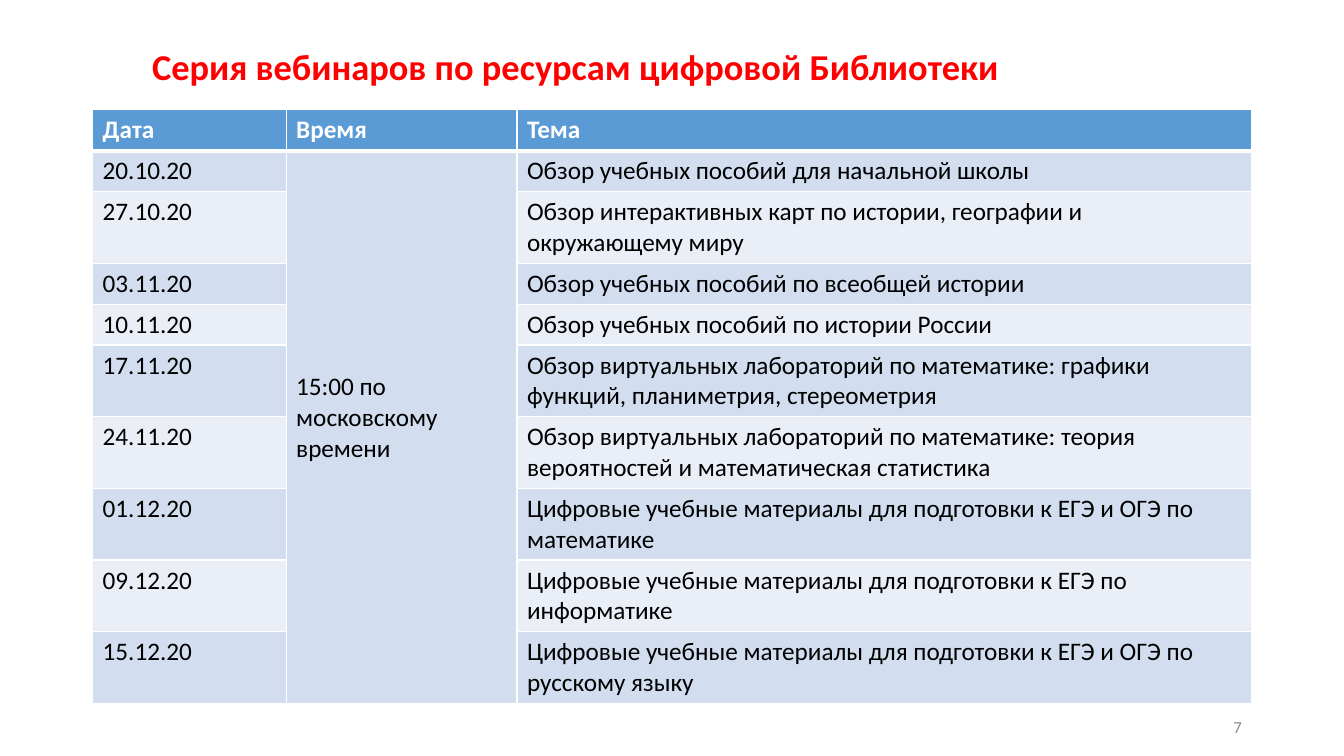
from lxml import etree
from pptx import Presentation
from pptx.dml.color import RGBColor
from pptx.enum.text import MSO_ANCHOR, PP_ALIGN
from pptx.oxml.ns import qn
from pptx.util import Pt

MIDDLE = MSO_ANCHOR.MIDDLE
LEFT, RIGHT = PP_ALIGN.LEFT, PP_ALIGN.RIGHT
FONT = "Calibri"
COLORS = {
    "title": "FF0000",
    "header": "5B9BD5",
    "odd": "D2DEEF",
    "even": "EAEFF7",
    "white": "FFFFFF",
    "text": "000000",
    "number": "8C8C8C",
}
HEADINGS = ["Дата", "Время", "Тема"]
TIME = "15:00 по московскому времени"
WEBINARS = [
    ("20.10.20", "Обзор учебных пособий для начальной школы"),
    ("27.10.20", "Обзор интерактивных карт по истории, географии и окружающему миру"),
    ("03.11.20", "Обзор учебных пособий по всеобщей истории"),
    ("10.11.20", "Обзор учебных пособий по истории России"),
    ("17.11.20", "Обзор виртуальных лабораторий по математике: графики функций, "
                 "планиметрия, стереометрия"),
    ("24.11.20", "Обзор виртуальных лабораторий по математике: теория вероятностей "
                 "и математическая статистика"),
    ("01.12.20", "Цифровые учебные материалы для подготовки к ЕГЭ и ОГЭ по математике"),
    ("09.12.20", "Цифровые учебные материалы для подготовки к ЕГЭ по информатике"),
    ("15.12.20", "Цифровые учебные материалы для подготовки к ЕГЭ и ОГЭ по русскому языку"),
]
COLUMN_WIDTHS = [138.2, 164.9, 524.9]
ONE_LINE, TWO_LINES = 29.2, 51.2
LINE_CAPACITY = 55  # characters that fit on one line of the topic column


def add_run(paragraph, text, size, color, bold=False):
    run = paragraph.add_run()
    run.text = text
    run.font.name = FONT
    run.font.size = Pt(size)
    run.font.bold = bold
    run.font.color.rgb = RGBColor.from_string(COLORS[color])


def add_label(slide, box, text, size, color, bold=False, align=LEFT, spacing=1.0):
    frame = slide.shapes.add_textbox(*(Pt(length) for length in box)).text_frame
    frame.word_wrap = True
    frame.vertical_anchor = MIDDLE
    paragraph = frame.paragraphs[0]
    paragraph.alignment = align
    paragraph.line_spacing = spacing
    add_run(paragraph, text, size, color, bold)


def set_borders(cell, bottom_width):
    properties = cell._tc.get_or_add_tcPr()
    widths = {"a:lnL": 1, "a:lnR": 1, "a:lnT": 1, "a:lnB": bottom_width}
    for position, (side, width) in enumerate(widths.items()):
        line = etree.Element(qn(side), w=str(Pt(width)))
        fill = etree.SubElement(line, qn("a:solidFill"))
        etree.SubElement(fill, qn("a:srgbClr"), val=COLORS["white"])
        properties.insert(position, line)


def fill_cell(cell, text, fill, header=False):
    cell.fill.solid()
    cell.fill.fore_color.rgb = RGBColor.from_string(COLORS[fill])
    set_borders(cell, 3 if header else 1)
    if text:
        add_run(cell.text_frame.paragraphs[0], text, 18,
                "white" if header else "text", header)


def add_schedule(slide):
    heights = [ONE_LINE] + [TWO_LINES if len(topic) > LINE_CAPACITY else ONE_LINE
                            for _, topic in WEBINARS]
    schedule = slide.shapes.add_table(
        len(heights), len(HEADINGS), Pt(66.2), Pt(78.5),
        Pt(sum(COLUMN_WIDTHS)), Pt(sum(heights))).table
    for column, width in zip(schedule.columns, COLUMN_WIDTHS):
        column.width = Pt(width)
    for row, height in zip(schedule.rows, heights):
        row.height = Pt(height)

    # Header row
    for index, heading in enumerate(HEADINGS):
        fill_cell(schedule.cell(0, index), heading, "header", header=True)

    # Webinars, with one shared time cell
    for number, (date, topic) in enumerate(WEBINARS, start=1):
        band = "odd" if number % 2 else "even"
        shared_time = TIME if number == 1 else ""
        for index, text in enumerate((date, shared_time, topic)):
            fill_cell(schedule.cell(number, index), text, band)
    time_cell = schedule.cell(1, 1)
    time_cell.merge(schedule.cell(len(WEBINARS), 1))
    time_cell.vertical_anchor = MIDDLE
    time_cell.margin_bottom = Pt(16.5)


def main():
    presentation = Presentation()
    presentation.slide_width = Pt(960)
    presentation.slide_height = Pt(540)
    slide = presentation.slides.add_slide(presentation.slide_layouts[6])

    # Title
    add_label(slide, (101.5, 12.2, 792.7, 74.2),
              "Серия вебинаров по ресурсам цифровой Библиотеки",
              26, "title", bold=True, spacing=0.9)
    add_schedule(slide)
    # Slide number
    add_label(slide, (678.2, 505, 216, 28.8), "7", 12, "number", align=RIGHT)

    presentation.save("out.pptx")


if __name__ == "__main__":
    main()
